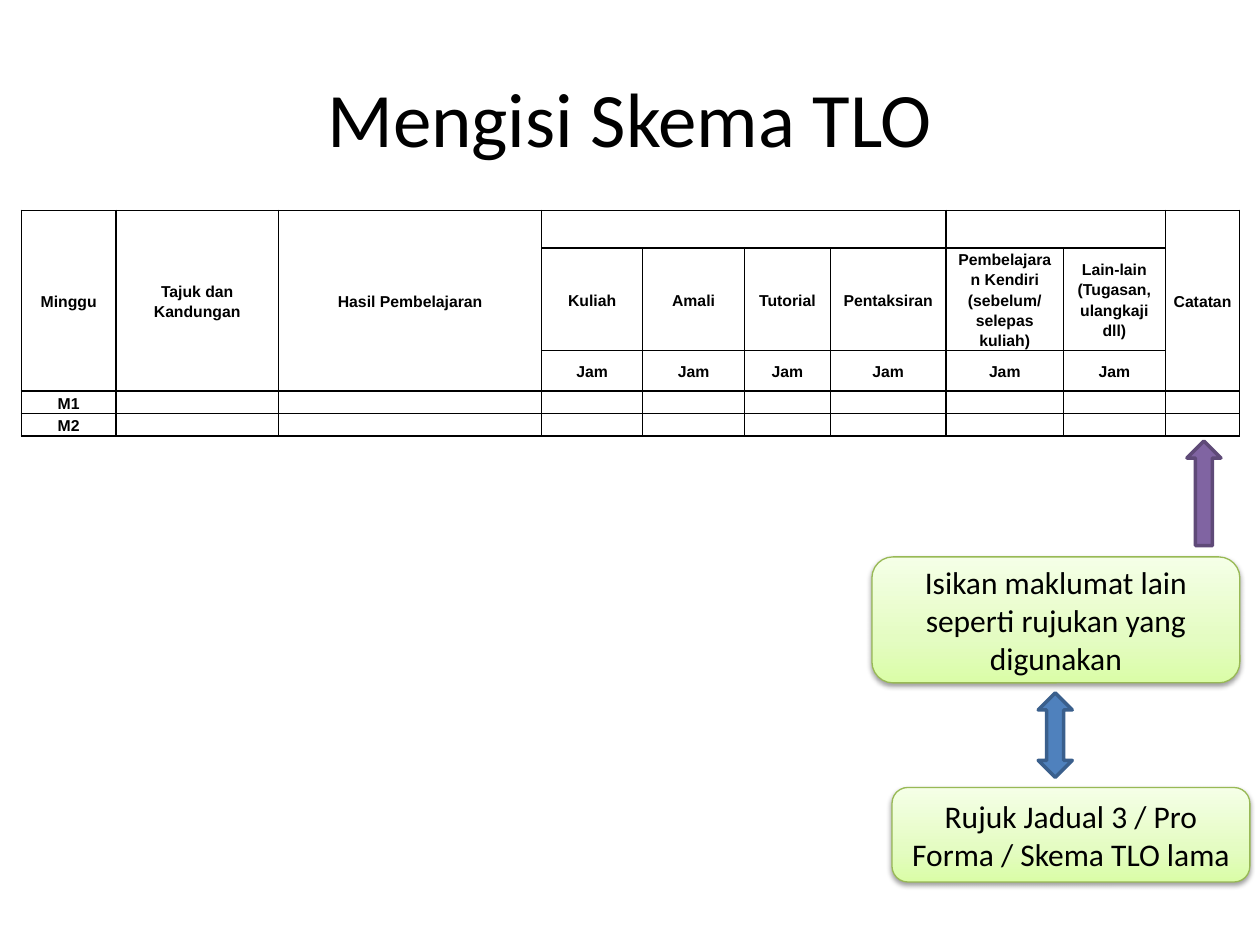
from copy import deepcopy
from lxml import etree
from pptx import Presentation
from pptx.dml.color import RGBColor
from pptx.enum.shapes import MSO_SHAPE
from pptx.enum.text import MSO_ANCHOR, PP_ALIGN
from pptx.oxml.ns import qn
from pptx.util import Inches, Pt

ROUND = MSO_SHAPE.ROUNDED_RECTANGLE
DOWN = MSO_SHAPE.DOWN_ARROW
BOTH = MSO_SHAPE.UP_DOWN_ARROW
MIDDLE = MSO_ANCHOR.MIDDLE
CENTER = PP_ALIGN.CENTER

WIDE, HIGH = 10, 7.5
COLS = [0.75, 1.29, 2.09, 0.8, 0.81, 0.68, 0.92, 0.93, 0.81, 0.59]
ROWS = [0.3, 0.81, 0.32, 0.18, 0.18]
TALL = {0: "Minggu", 1: "Tajuk dan Kandungan", 2: "Hasil Pembelajaran", 9: "Catatan"}
KINDS = ["Kuliah", "Amali", "Tutorial", "Pentaksiran",
         "Pembelajaran Kendiri (sebelum/ selepas kuliah)",
         "Lain-lain (Tugasan, ulangkaji dll)"]
WEEKS = ["M1", "M2"]
SPANS = [(0, col, 2, col) for col in TALL] + [(0, 3, 0, 6), (0, 7, 0, 8)]
GREENS = [(0, "DAFDA7"), (0.35, "E4FCC2"), (1, "F5FFE7")]


def rgb(code):
    """Turn a hex string into a colour."""
    return RGBColor.from_string(code)


def put(item, form):
    """Set attributes from a dict of format values."""
    for name, value in form.items():
        setattr(item, name, value)


def node(root, tag, **attrs):
    """Add a drawing element with attributes."""
    return etree.SubElement(root, qn("a:" + tag), {key: str(val) for key, val in attrs.items()})


class Deck:
    """Hold the style and the current slide."""

    ink = "000000"
    cell = {"margin_left": Inches(0.06), "margin_right": Inches(0.06),
            "margin_top": 0, "margin_bottom": 0, "vertical_anchor": MIDDLE}

    def __init__(self):
        """Start a deck with one title-only slide."""
        self.deck = Presentation()
        put(self.deck, {"slide_width": Inches(WIDE), "slide_height": Inches(HIGH)})
        self.slide = self.deck.slides.add_slide(self.deck.slide_layouts[5])

    def area(self, left, top, wide, high):
        """Turn columns and rows of the one-inch grid into lengths."""
        return [Inches(part) for part in (left, top, wide, high)]

    def text(self, frame, words, size, face="Calibri", **form):
        """Write one centred paragraph."""
        para = frame.paragraphs[0]
        para.text = words
        put(para, {"alignment": CENTER, **form})
        put(para.font, {"size": Pt(size), "name": face})
        para.font.color.rgb = rgb(self.ink)
        return para

    def title(self, words, *spot):
        """Place and fill the title."""
        head = self.slide.shapes.title
        put(head, dict(zip(("left", "top", "width", "height"), self.area(*spot))))
        put(head.text_frame, {"vertical_anchor": MIDDLE, "word_wrap": True})
        self.text(head.text_frame, words, 44)

    def edge(self, cell):
        """Draw the four borders of a cell."""
        props = cell._tc.get_or_add_tcPr()
        for spot, side in enumerate(("lnL", "lnR", "lnT", "lnB")):
            line = node(props, side, w=Pt(1))
            node(node(line, "solidFill"), "srgbClr", val=self.ink)
            props.insert(spot, line)

    def table(self, cols, rows, words, spans, left, top):
        """Draw a bordered table from words keyed by row and column."""
        spot = self.area(left, top, sum(cols), sum(rows))
        grid = self.slide.shapes.add_table(len(rows), len(cols), *spot).table
        put(grid, {"first_row": False, "horz_banding": False})
        for col, wide in zip(grid.columns, cols):
            col.width = Inches(wide)
        for row, high in zip(grid.rows, rows):
            row.height = Inches(high)
        for r in range(len(rows)):
            for c in range(len(cols)):
                cell = grid.cell(r, c)
                put(cell, self.cell)
                cell.fill.background()
                self.edge(cell)
                para = self.text(cell.text_frame, words.get((r, c), ""), 9, "Arial",
                                 line_spacing=1.15)
                para.font.bold = True
        for r, c, end, last in spans:
            grid.cell(r, c).merge(grid.cell(end, last))

    def shape(self, host, kind, spot, edge, width):
        """Add an outlined shape without a shadow."""
        item = host.shapes.add_shape(kind, *self.area(*spot))
        item.shadow.inherit = False
        item.line.color.rgb = rgb(edge)
        item.line.width = Pt(width)
        return item

    def arrow(self, host, kind, spot, fill, edge, turn=0):
        """Add a solid block arrow."""
        item = self.shape(host, kind, spot, edge, 2)
        item.fill.solid()
        item.fill.fore_color.rgb = rgb(fill)
        item.rotation = turn

    def note(self, host, words, *spot):
        """Add a rounded green box with a soft shadow."""
        item = self.shape(host, ROUND, spot, "98B955", 0.75)
        item.fill.gradient()
        item.fill.gradient_angle = 90
        props = item._element.spPr
        stops = props.find(".//" + qn("a:gsLst"))
        stops.append(deepcopy(stops[0]))
        for stop, (place, code) in zip(item.fill.gradient_stops, GREENS):
            stop.position = place
            stop.color.rgb = rgb(code)
        glow = node(props.find(qn("a:effectLst")), "outerShdw", blurRad=Pt(3.1),
                    dist=Pt(1.6), dir=90 * 60000, rotWithShape=0)
        node(node(glow, "srgbClr", val=self.ink), "alpha", val=38000)
        put(item.text_frame, {"word_wrap": True, "vertical_anchor": MIDDLE})
        self.text(item.text_frame, words, 18)


def main():
    """Build and save the slide."""
    deck = Deck()
    deck.title("Mengisi Skema TLO", 0.5, 0.3, 9, 1.25)
    words = {(0, col): name for col, name in TALL.items()}
    for col, name in enumerate(KINDS, 3):
        words.update({(1, col): name, (2, col): "Jam"})
    words.update({(row, 0): week for row, week in enumerate(WEEKS, 3)})
    deck.table(COLS, ROWS, words, SPANS, 0.17, 1.67)
    page = deck.slide
    deck.note(page, "Isikan maklumat lain seperti rujukan yang digunakan", 6.92, 4.42, 2.92, 1)
    deck.arrow(page, DOWN, (9.42, 3.5, 0.27, 0.83), "8064A2", "5F4A78", 180)
    group = page.shapes.add_group_shape()
    deck.arrow(group, BOTH, (8.24, 5.5, 0.27, 0.67), "4F81BD", "3A5F8C")
    deck.note(group, "Rujuk Jadual 3 / Pro Forma / Skema TLO lama", 7.08, 6.25, 2.84, 0.75)
    deck.deck.save("out.pptx")


if __name__ == "__main__":
    main()
